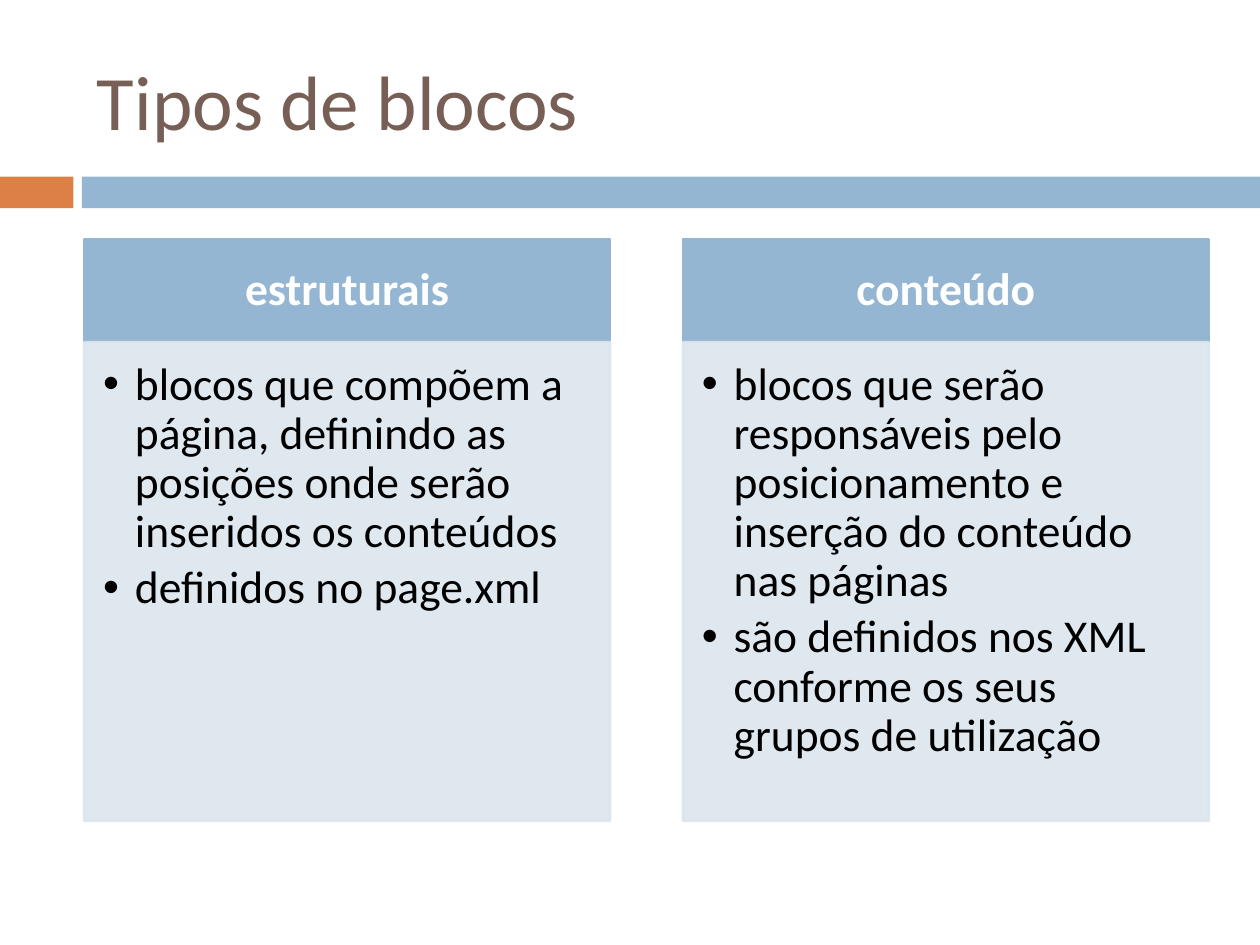
"""Build the slide that compares structural and content blocks."""
from dataclasses import dataclass

from lxml import etree
from pptx import Presentation
from pptx.dml.color import RGBColor
from pptx.enum.shapes import MSO_SHAPE
from pptx.enum.text import MSO_ANCHOR, MSO_AUTO_SIZE, PP_ALIGN
from pptx.oxml.ns import qn
from pptx.util import Cm, Pt

RECTANGLE = MSO_SHAPE.RECTANGLE
TOP, MIDDLE = MSO_ANCHOR.TOP, MSO_ANCHOR.MIDDLE
LEFT, CENTER = PP_ALIGN.LEFT, PP_ALIGN.CENTER
NO_AUTOFIT = MSO_AUTO_SIZE.NONE

FONT = "Calibri"
COLORS = {
    "accent": "DD8047",
    "blue": "94B6D2",
    "pale": "DCE5EE",
    "title": "775F55",
    "white": "FFFFFF",
    "black": "000000",
}
SLIDE_WIDTH, SLIDE_HEIGHT = 25.4, 19.05
BAND_TOP, BAND_HEIGHT = 3.56, 0.64
COLUMN_LEFT, COLUMN_WIDTH, COLUMN_PITCH = 1.7, 10.6, 12.07
HEADING_TOP, HEADING_HEIGHT, BODY_HEIGHT = 4.82, 2.08, 9.65
BULLET_INDENT = 0.64
BODY_OPACITY = 90


@dataclass
class Box:
    """Position and size in centimetres."""
    left: float
    top: float
    width: float
    height: float

    def lengths(self) -> list:
        return [Cm(v) for v in (self.left, self.top, self.width, self.height)]


@dataclass
class BlockType:
    """A kind of block with its description."""
    heading: str
    points: list[str]


BLOCK_TYPES = [
    BlockType("estruturais", [
        "blocos que compõem a página, definindo as posições onde serão inseridos os conteúdos",
        "definidos no page.xml",
    ]),
    BlockType("conteúdo", [
        "blocos que serão responsáveis pelo posicionamento e inserção do conteúdo nas páginas",
        "são definidos nos XML conforme os seus grupos de utilização",
    ]),
]


def style_font(paragraph, size: float, color: str, bold: bool = False) -> None:
    """Format all text of a paragraph."""
    font = paragraph.font
    font.name, font.size, font.bold = FONT, Pt(size), bold
    font.color.rgb = RGBColor.from_string(COLORS[color])


def add_panel(slide, box: Box, color: str, outlined: bool = False, opacity: int = 100):
    """Draw a flat rectangle."""
    panel = slide.shapes.add_shape(RECTANGLE, *box.lengths())
    panel.shadow.inherit = False
    panel.fill.solid()
    panel.fill.fore_color.rgb = RGBColor.from_string(COLORS[color])
    if outlined:
        panel.line.width = Pt(1.5)
        panel.line.color.rgb = RGBColor.from_string(COLORS[color])
    else:
        panel.line.fill.background()
    if opacity < 100:
        for tint in panel.element.spPr.iter(qn("a:srgbClr")):
            etree.SubElement(tint, qn("a:alpha"), val=str(opacity * 1000))
    return panel


def set_frame(frame, anchor, insets: tuple[float, float, float, float]) -> None:
    """Set wrapping, anchor and insets of a text frame."""
    frame.word_wrap = True
    frame.vertical_anchor = anchor
    (frame.margin_left, frame.margin_top,
     frame.margin_right, frame.margin_bottom) = map(Cm, insets)


def add_bullet(paragraph) -> None:
    """Give a paragraph a hanging round bullet."""
    properties = paragraph._p.get_or_add_pPr()
    properties.set("marL", str(Cm(BULLET_INDENT)))
    properties.set("indent", str(-Cm(BULLET_INDENT)))
    etree.SubElement(properties, qn("a:buFont"), typeface="Arial")
    etree.SubElement(properties, qn("a:buChar"), char="•")


def add_column(slide, left: float, block: BlockType) -> None:
    """Draw a heading panel over a panel of bullets."""
    heading = add_panel(slide, Box(left, HEADING_TOP, COLUMN_WIDTH, HEADING_HEIGHT),
                        "blue", outlined=True).text_frame
    set_frame(heading, MIDDLE, (0.5, 0.3, 0.5, 0.3))
    heading.text = block.heading
    label = heading.paragraphs[0]
    label.alignment, label.line_spacing = CENTER, 0.9
    style_font(label, 26, "white", bold=True)

    body_box = Box(left, HEADING_TOP + HEADING_HEIGHT, COLUMN_WIDTH, BODY_HEIGHT)
    body = add_panel(slide, body_box, "pale", True, BODY_OPACITY).text_frame
    set_frame(body, TOP, (0.38, 0.38, 0.5, 0.58))
    body.text = "\n".join(block.points)
    for point in body.paragraphs:
        point.alignment, point.line_spacing, point.space_after = LEFT, 0.9, Pt(4)
        add_bullet(point)
        style_font(point, 26, "black")


def add_title(slide, text: str) -> None:
    """Place and format the title."""
    title = slide.shapes.title
    title.left, title.top, title.width, title.height = Box(1.7, 0.64, 22.65, 2.74).lengths()
    title.text_frame.text = text
    title.text_frame.vertical_anchor = MIDDLE
    title.text_frame.auto_size = NO_AUTOFIT
    heading = title.text_frame.paragraphs[0]
    heading.alignment = LEFT
    style_font(heading, 44, "title")


def main() -> None:
    """Build and save the presentation."""
    presentation = Presentation()
    presentation.slide_width, presentation.slide_height = Cm(SLIDE_WIDTH), Cm(SLIDE_HEIGHT)
    slide = presentation.slides.add_slide(presentation.slide_layouts[5])
    band_left = 1.65
    add_panel(slide, Box(0, BAND_TOP, 1.48, BAND_HEIGHT), "accent")
    add_panel(slide, Box(band_left, BAND_TOP, SLIDE_WIDTH - band_left, BAND_HEIGHT), "blue")
    add_title(slide, "Tipos de blocos")
    for index, block in enumerate(BLOCK_TYPES):
        add_column(slide, COLUMN_LEFT + index * COLUMN_PITCH, block)
    presentation.save("out.pptx")


if __name__ == "__main__":
    main()
